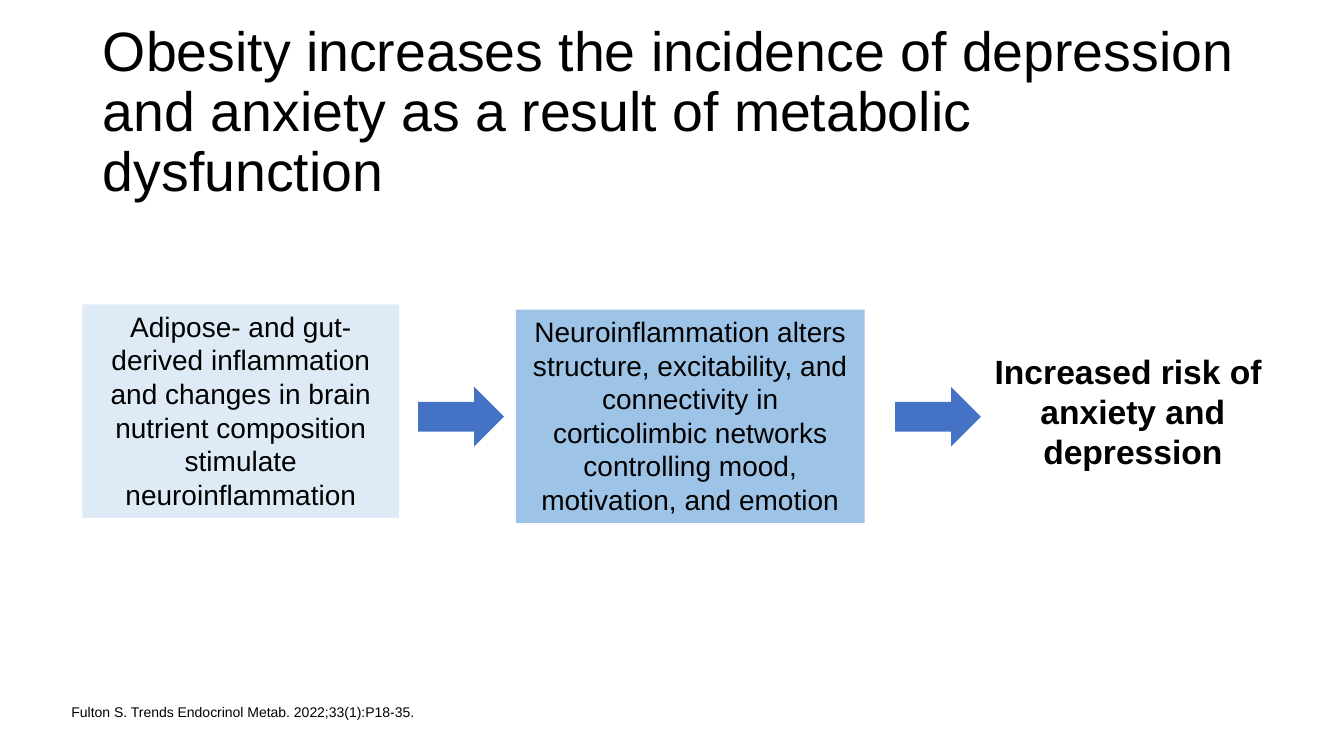
from dataclasses import dataclass

from lxml import etree
from pptx import Presentation, util as u
from pptx.dml.color import RGBColor
from pptx.enum import shapes, text
from pptx.oxml.ns import qn

TITLE = ("Obesity increases the incidence of depression and anxiety "
         "as a result of metabolic dysfunction")
CITATION = "Fulton S. Trends Endocrinol Metab. 2022;33(1):P18-35."

# wording, (left, top, width, height) in cm, theme fill
CAUSES = [
    ("Adipose- and gut-derived inflammation and changes in brain nutrient "
     "composition stimulate neuroinflammation", (2.08, 7.67, 7.98, 5.38), "pale"),
    ("Neuroinflammation alters structure, excitability, and connectivity in "
     "corticolimbic networks controlling mood, motivation, and emotion",
     (13, 7.8, 8.79, 5.38), "sky"),
]
OUTCOME = ("Increased risk of \vanxiety and depression", (24.74, 8.71, 7.62, 3.33))

TITLE_AREA = (2.34, 1.02, 29.21, 3.68)
CITATION_AREA = (1.8, 17.15, 29.74, 1.02)
ARROW_LEFTS = (10.54, 22.56)
ARROW_TOP, ARROW_WIDTH, ARROW_HEIGHT = 9.75, 2.16, 1.5


@dataclass(frozen=True)
class Theme:
    font: str = "Arial"
    ink: str = "000000"
    pale: str = "DEEBF7"
    sky: str = "9DC3E6"
    arrow: str = "4472C4"
    title_size: float = 39.6
    outcome_size: float = 24
    cause_size: float = 20
    citation_size: float = 10


THEME = Theme()


def lengths(area):
    return [u.Cm(value) for value in area]


def place(shape, area):
    shape.left, shape.top, shape.width, shape.height = lengths(area)


def write(shape, wording, size, align, anchor, bold=False,
          fit=text.MSO_AUTO_SIZE.NONE):
    """Fill a shape with one wrapped paragraph and return that paragraph."""
    frame = shape.text_frame
    frame.text = wording
    frame.word_wrap = True
    frame.auto_size = fit
    frame.vertical_anchor = anchor
    para = frame.paragraphs[0]
    para.alignment = align
    para.font.name = THEME.font
    para.font.size = u.Pt(size)
    para.font.bold = bold
    para.font.color.rgb = RGBColor.from_string(THEME.ink)
    return para


def add_filled(page, kind, area, colour):
    shape = page.shapes.add_shape(kind, *lengths(area))
    shape.shadow.inherit = False
    shape.fill.solid()
    shape.fill.fore_color.rgb = RGBColor.from_string(colour)
    shape.line.fill.background()
    return shape


def add_headings(page):
    title, citation = page.shapes.title, page.placeholders[1]
    place(title, TITLE_AREA)
    para = write(title, TITLE, THEME.title_size,
                 text.PP_ALIGN.LEFT, text.MSO_ANCHOR.MIDDLE)
    para.line_spacing = 0.9

    place(citation, CITATION_AREA)
    para = write(citation, CITATION, THEME.citation_size,
                 text.PP_ALIGN.LEFT, text.MSO_ANCHOR.BOTTOM)
    para.line_spacing = 0.9
    para.space_before = u.Pt(10)
    frame = citation.text_frame
    frame.margin_left = frame.margin_right = 0
    frame.margin_top = frame.margin_bottom = 0
    properties = para._p.get_or_add_pPr()
    properties.set("marL", "0")
    properties.set("indent", "0")
    etree.SubElement(properties, qn("a:buNone"))


def add_flow(page):
    style = dict(align=text.PP_ALIGN.CENTER, anchor=text.MSO_ANCHOR.TOP,
                 fit=text.MSO_AUTO_SIZE.SHAPE_TO_FIT_TEXT)
    for wording, area, fill in CAUSES:
        box = add_filled(page, shapes.MSO_SHAPE.RECTANGLE, area,
                         getattr(THEME, fill))
        write(box, wording, THEME.cause_size, **style)
    for left in ARROW_LEFTS:
        add_filled(page, shapes.MSO_SHAPE.RIGHT_ARROW,
                   (left, ARROW_TOP, ARROW_WIDTH, ARROW_HEIGHT), THEME.arrow)
    wording, area = OUTCOME
    box = page.shapes.add_textbox(*lengths(area))
    write(box, wording, THEME.outcome_size, bold=True, **style)


def main():
    deck = Presentation()
    deck.slide_width, deck.slide_height = u.Cm(33.87), u.Cm(19.05)
    page = deck.slides.add_slide(deck.slide_layouts[1])
    add_headings(page)
    add_flow(page)
    deck.save("out.pptx")


if __name__ == "__main__":
    main()
